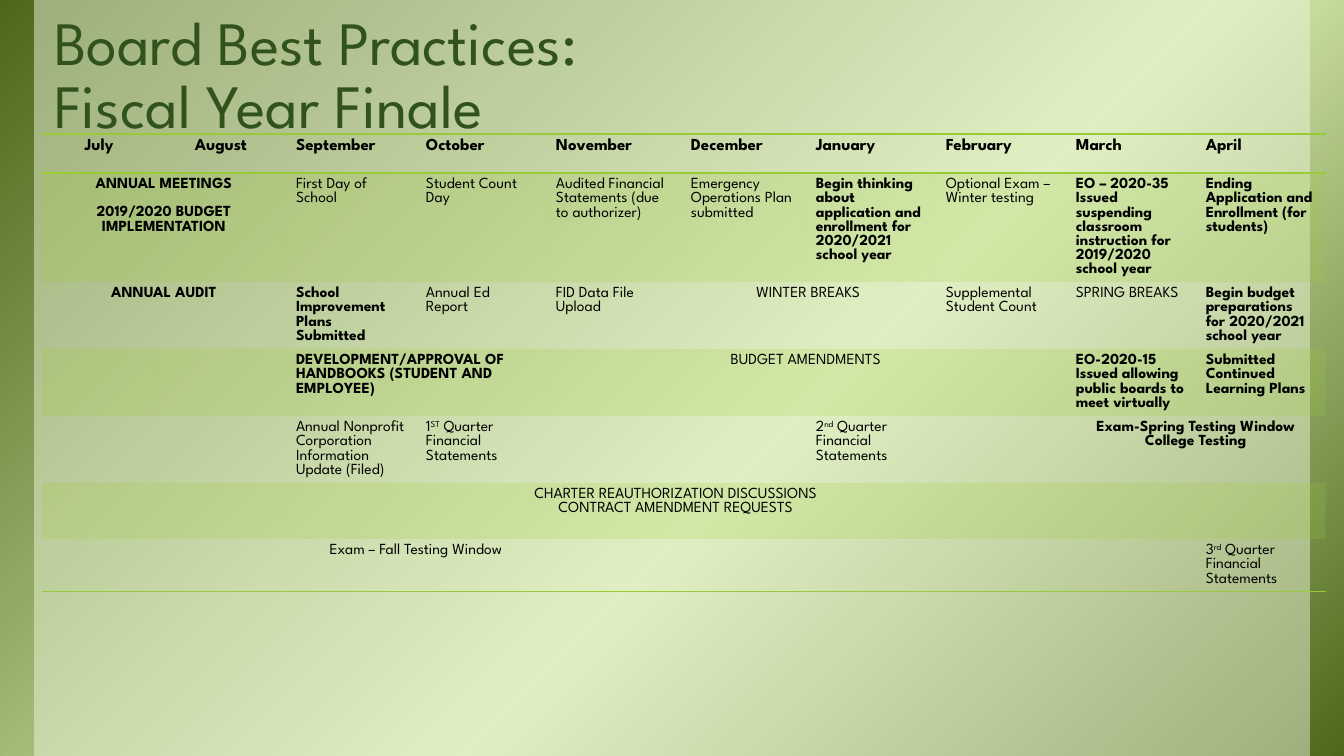
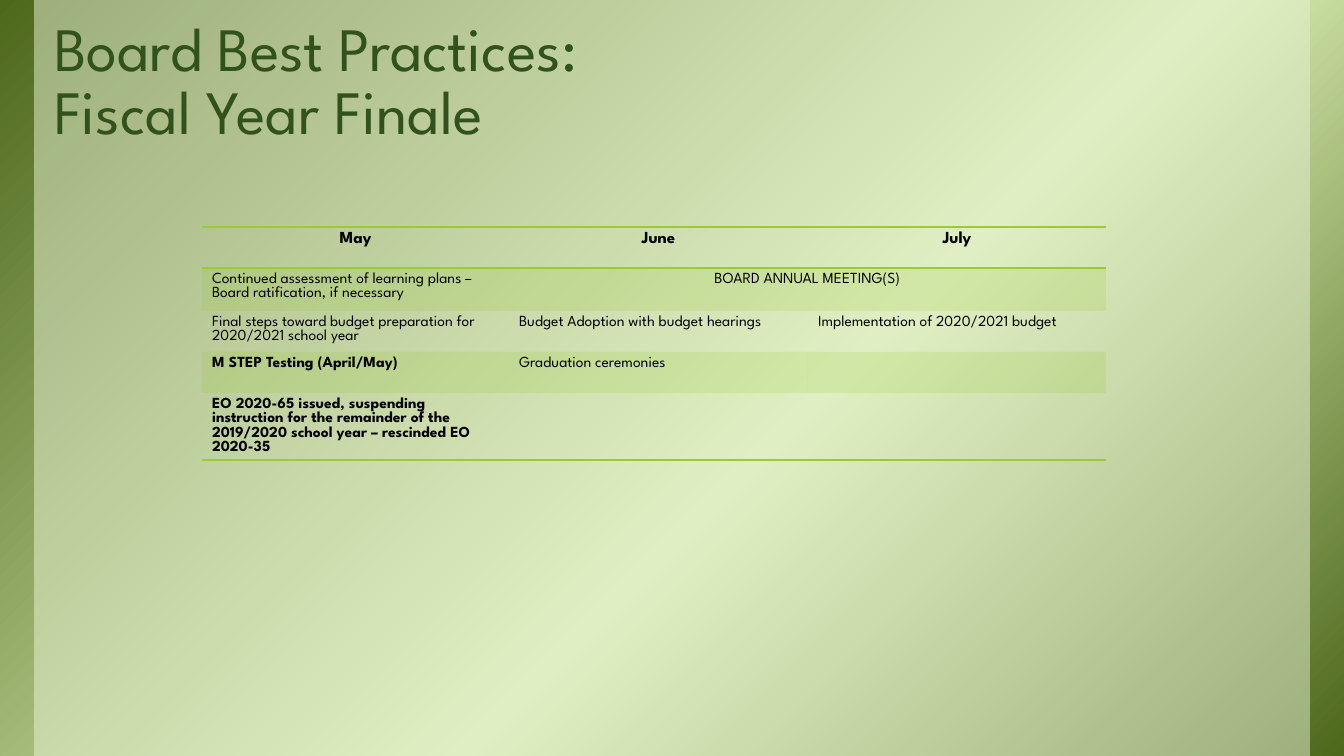
import pptx
import pptx.dml.color
import pptx.enum.shapes
import pptx.enum.text
import pptx.oxml
import pptx.oxml.ns
import pptx.util

RGB = pptx.dml.color.RGBColor
Pt = pptx.util.Pt
ALIGN = pptx.enum.text.PP_ALIGN
DARK = RGB(0x4D, 0x67, 0x1B)
LIGHT = RGB(0xD6, 0xEA, 0xAF)
PALE = RGB(0xEB, 0xF5, 0xD7)
TITLE = RGB(0x31, 0x52, 0x1C)
GREEN = RGB(0x99, 0xCB, 0x38)
BLACK = RGB(0, 0, 0)
FONT = "League Spartan"
PX = 12192000 / 1344
NS = pptx.oxml.ns.nsdecls("a")
NO_GRID = "{2D5ABB26-0587-4C30-8999-92F81FD0307C}"


def px(*lengths):
    return [pptx.util.Emu(round(n * PX)) for n in lengths]


def set_alpha(fill, percent):
    color = fill._xPr.find(".//" + pptx.oxml.ns.qn("a:srgbClr"))
    color.append(pptx.oxml.parse_xml(f'<a:alpha {NS} val="{percent * 1000}"/>'))


slides = [
    {
        "title_top": -6, "at": (42, 134),
        "cols": [114, 130, 130, 130, 135, 125, 130, 130, 130, 130],
        "rows": [39, 109, 67, 67, 67, 56, 52],
        "months": ["July", "August", "September", "October", "November",
                   "December", "January", "February", "March", "April"],
        "centred_months": 2,
        "cells": [
            (1, 0, 2, "ANNUAL MEETINGS\n2019/2020 BUDGET IMPLEMENTATION", "bc"),
            (1, 2, 1, "First Day of School", ""),
            (1, 3, 1, "Student Count Day", ""),
            (1, 4, 1, "Audited Financial Statements (due to authorizer)", ""),
            (1, 5, 1, "Emergency Operations Plan submitted", ""),
            (1, 6, 1, "Begin thinking about application and enrollment for 2020/2021 school year", "b"),
            (1, 7, 1, "Optional Exam – Winter testing", ""),
            (1, 8, 1, "EO – 2020-35 Issued suspending classroom instruction for 2019/2020 school year", "b"),
            (1, 9, 1, "Ending Application and Enrollment (for students)", "b"),
            (2, 0, 2, "ANNUAL AUDIT", "bc"),
            (2, 2, 1, "School Improvement Plans Submitted", "b"),
            (2, 3, 1, "Annual Ed Report", ""),
            (2, 4, 1, "FID Data File Upload", ""),
            (2, 5, 2, "WINTER BREAKS", "c"),
            (2, 7, 1, "Supplemental Student Count", ""),
            (2, 8, 1, "SPRING BREAKS", ""),
            (2, 9, 1, "Begin budget preparations for 2020/2021 school year", "b"),
            (3, 2, 2, "DEVELOPMENT/APPROVAL OF HANDBOOKS (STUDENT AND EMPLOYEE)", "b"),
            (3, 4, 4, "BUDGET AMENDMENTS", "c"),
            (3, 8, 1, "EO-2020-15 Issued allowing public boards to meet virtually", "b"),
            (3, 9, 1, "Submitted Continued Learning Plans", "b"),
            (4, 2, 1, "Annual Nonprofit Corporation Information Update (Filed)", ""),
            (4, 3, 1, "1^ST^ Quarter Financial Statements", ""),
            (4, 6, 1, "2^nd^ Quarter Financial Statements", ""),
            (4, 8, 2, "Exam-Spring Testing Window\nCollege Testing", "bc"),
            (5, 2, 6, "CHARTER REAUTHORIZATION DISCUSSIONS\nCONTRACT AMENDMENT REQUESTS", "c"),
            (5, 8, 2, "", ""),
            (6, 2, 2, "Exam – Fall Testing Window", "c"),
            (6, 9, 1, "3^rd^ Quarter Financial Statements", ""),
        ],
    },
    {
        "title_top": 0, "at": (202, 227),
        "cols": [307, 299, 298],
        "rows": [41, 43, 41, 41, 67],
        "months": ["May", "June", "July"],
        "centred_months": 3,
        "cells": [
            (1, 0, 1, "Continued assessment of learning plans – Board ratification, if necessary", ""),
            (1, 1, 2, "BOARD ANNUAL MEETING(S)", "c"),
            (2, 0, 1, "Final steps toward budget preparation for 2020/2021 school year", ""),
            (2, 1, 1, "Budget Adoption with budget hearings", ""),
            (2, 2, 1, "Implementation of 2020/2021 budget", ""),
            (3, 0, 1, "M STEP Testing (April/May)", "b"),
            (3, 1, 1, "Graduation ceremonies", ""),
            (4, 0, 1, "EO 2020-65 issued, suspending instruction for the remainder of the "
                      "2019/2020 school year – rescinded EO 2020-35", "b"),
        ],
    },
]

prs = pptx.Presentation()
prs.slide_width, prs.slide_height = px(1344, 756)
layout = prs.slide_layouts[5]

for number, data in enumerate(slides):
    s = prs.slides.add_slide(layout)
    if number == 0:
        for index, box in enumerate([(0, 0, 1344, 756), (34, 0, 1276, 756)]):
            sp = s.shapes.add_shape(pptx.enum.shapes.MSO_SHAPE.RECTANGLE, *px(*box))
            sp.shadow.inherit = False
            sp.line.fill.background()
            if index == 0:
                sp.fill.gradient()
                stops = "".join(
                    f'<a:gs pos="{pos}000"><a:srgbClr val="{color}"/></a:gs>'
                    for pos, color in [(0, DARK), (58, LIGHT), (100, DARK)])
                grad = sp.element.spPr.find(pptx.oxml.ns.qn("a:gradFill"))
                grad.getparent().replace(grad, pptx.oxml.parse_xml(
                    f'<a:gradFill {NS} rotWithShape="1"><a:gsLst>{stops}</a:gsLst>'
                    '<a:lin ang="2700000" scaled="0"/></a:gradFill>'))
            else:
                sp.fill.solid()
                sp.fill.fore_color.rgb = PALE
                set_alpha(sp.fill, 50)
            layout.shapes.element.insert(2 + index, sp.element)

    title = s.shapes.title
    title.left, title.top, title.width, title.height = px(41, data["title_top"], 1120, 154)
    tf = title.text_frame
    tf.margin_left, tf.margin_top, tf.margin_right, tf.margin_bottom = px(13, 7, 13, 7)
    tf.vertical_anchor = pptx.enum.text.MSO_ANCHOR.BOTTOM
    tf.auto_size = pptx.enum.text.MSO_AUTO_SIZE.NONE
    tf.word_wrap = True
    p = tf.paragraphs[0]
    p.text = "Board Best Practices:\vFiscal Year Finale"
    p.alignment = ALIGN.LEFT
    p.line_spacing = 0.85
    for r in p.runs:
        r.font.size, r.font.name, r.font.color.rgb = Pt(44), FONT, TITLE

    cols, rows = data["cols"], data["rows"]
    frame = s.shapes.add_table(len(rows), len(cols), *px(*data["at"], sum(cols), sum(rows)))
    table = frame.table
    table.first_row = table.horz_banding = False
    frame.element.find(".//" + pptx.oxml.ns.qn("a:tableStyleId")).text = NO_GRID
    for col, width in zip(table.columns, px(*cols)):
        col.width = width
    for row, height in zip(table.rows, px(*rows)):
        row.height = height

    for i, row in enumerate(table.rows):
        sides = {0: ["lnT", "lnB"], len(rows) - 1: ["lnB"]}.get(i, [])
        for cell in row.cells:
            if i % 2 and i < len(rows) - 1:
                cell.fill.solid()
                cell.fill.fore_color.rgb = GREEN
                set_alpha(cell.fill, 20)
            else:
                cell.fill.background()
            for index, side in enumerate(sides):
                cell._tc.get_or_add_tcPr().insert(index, pptx.oxml.parse_xml(
                    f'<a:{side} {NS} w="12700"><a:solidFill><a:srgbClr val="{GREEN}"/>'
                    f'</a:solidFill></a:{side}>'))

    months = [(0, i, 1, month, "bc" if i < data["centred_months"] else "b")
              for i, month in enumerate(data["months"])]
    for row, col, span, text, style in months + data["cells"]:
        cell = table.cell(row, col)
        if span > 1:
            cell.merge(table.cell(row, col + span - 1))
        for i, line in enumerate(text.split("\n") if text else []):
            tf = cell.text_frame
            p = tf.add_paragraph() if i else tf.paragraphs[0]
            p.alignment = ALIGN.CENTER if "c" in style else ALIGN.LEFT
            if i and text.startswith("ANNUAL MEETINGS"):
                p.space_before = Pt(10)
            for j, part in enumerate(line.split("^")):
                r = p.add_run()
                r.text = part
                look = {"size": Pt(11 if row else 12), "name": FONT, "bold": "b" in style}
                for name, value in look.items():
                    setattr(r.font, name, value)
                r.font.color.rgb = BLACK
                if j % 2:
                    r.font._rPr.set("baseline", "30000")

prs.save("out.pptx")
